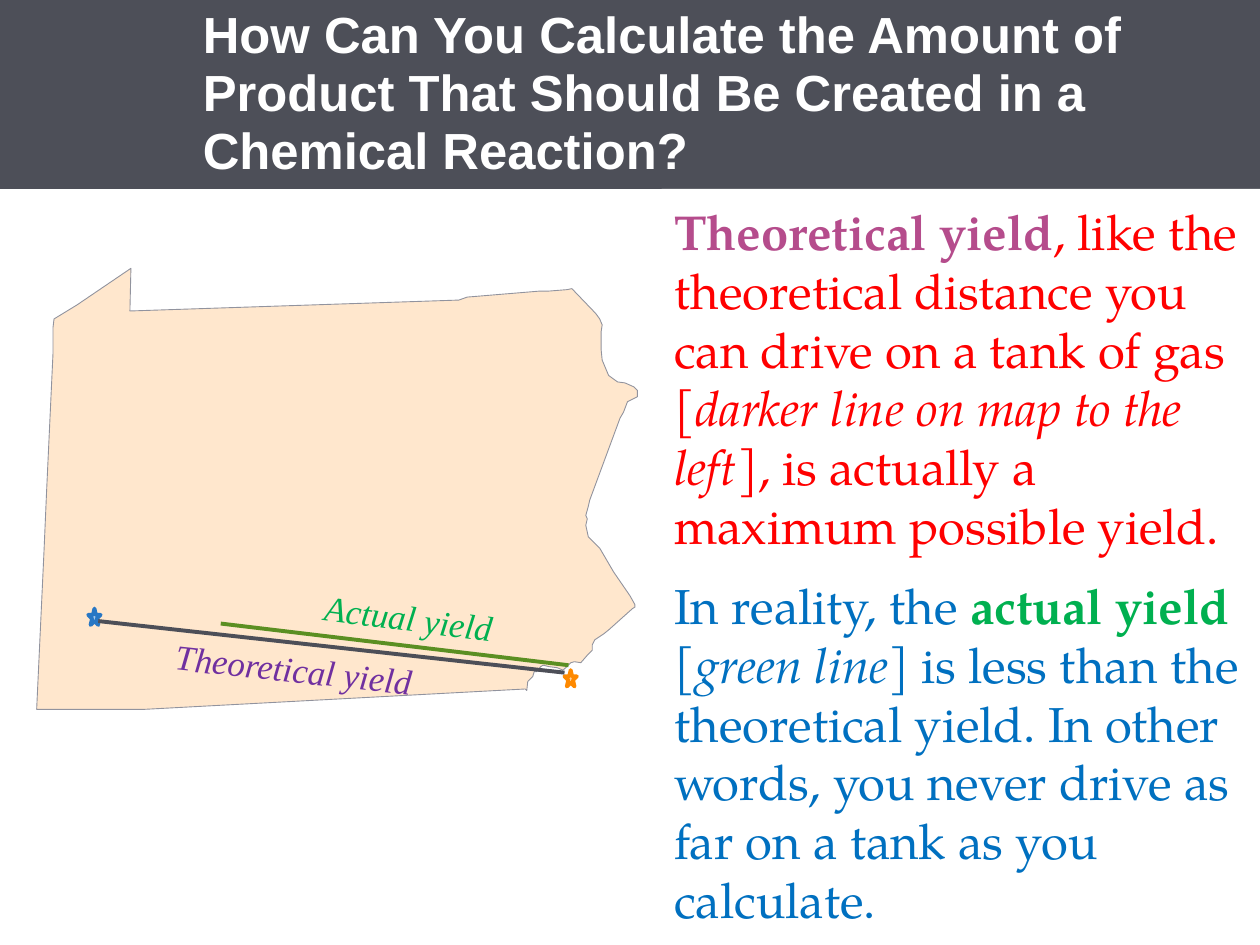
from dataclasses import dataclass

import lxml.etree
import pptx
import pptx.dml.color
import pptx.enum.shapes
import pptx.enum.text
import pptx.oxml.ns
import pptx.util

Cm = pptx.util.Cm
Pt = pptx.util.Pt
Shape = pptx.enum.shapes.MSO_SHAPE
Align = pptx.enum.text.PP_ALIGN
Anchor = pptx.enum.text.MSO_ANCHOR


@dataclass(frozen=True)
class Theme:
    slate: str = "4D4F58"
    white: str = "FFFFFF"
    land: str = "FFE7CD"
    border: str = "91939E"
    start_fill: str = "A4C9EC"
    start_line: str = "2877C4"
    end_fill: str = "FFD099"
    end_line: str = "FE8900"
    olive: str = "5B8F22"
    plum: str = "B54C8C"
    red: str = "FF0000"
    blue: str = "0070C0"
    green: str = "00B050"
    purple: str = "7030A0"
    title_font: str = "Arial"
    body_font: str = "TeX Gyre Pagella"
    label_font: str = "Times New Roman"
    title_size: float = 29
    body_size: float = 28
    label_size: float = 20
    thin: float = 0.5
    thick: float = 2.25


@dataclass(frozen=True)
class Box:
    """Position and size in centimetres."""
    left: float
    top: float
    width: float
    height: float

    def emu(self) -> tuple:
        return Cm(self.left), Cm(self.top), Cm(self.width), Cm(self.height)


@dataclass(frozen=True)
class Star:
    box: Box
    fill: str
    line: str


@dataclass(frozen=True)
class Route:
    start: tuple[float, float]
    end: tuple[float, float]
    color: str


@dataclass(frozen=True)
class Label:
    text: str
    box: Box
    angle: float
    color: str


T = Theme()

# State outline, clockwise from the north-east corner, in tenths of a millimetre
OUTLINE = [
    (1153, 582), (1201, 632), (1209, 643), (1214, 655), (1212, 668), (1212, 706),
    (1214, 726), (1227, 757), (1245, 770), (1260, 772), (1278, 780), (1285, 787),
    (1285, 800), (1265, 810), (1257, 831), (1250, 843), (1189, 1008), (1186, 1021),
    (1181, 1039), (1184, 1046), (1181, 1059), (1186, 1082), (1209, 1105), (1237, 1153),
    (1270, 1201), (1280, 1219), (1280, 1224), (1275, 1227), (1227, 1270), (1217, 1278),
    (1199, 1290), (1194, 1300), (1194, 1311), (1184, 1321), (1171, 1336), (1158, 1334),
    (1151, 1336), (1143, 1344), (1135, 1351), (1123, 1346), (1107, 1344), (1095, 1341),
    (1090, 1344), (1082, 1354), (1077, 1354), (1074, 1364), (1064, 1374), (1062, 1392),
    (1059, 1389), (292, 1430), (74, 1430), (89, 1107), (94, 991), (107, 711),
    (107, 660), (109, 643), (114, 640), (155, 615), (264, 541), (262, 627),
    (925, 605), (942, 599), (1087, 587), (1105, 587), (1143, 584),
]
START = Star(Box(1.78, 12.27, 0.25, 0.33), T.start_fill, T.start_line)
END = Star(Box(11.38, 13.51, 0.25, 0.33), T.end_fill, T.end_line)
ACTUAL = Route((11.46, 13.41), (4.45, 12.57), T.olive)
THEORETICAL = Route((11.38, 13.56), (1.98, 12.52), T.slate)
LABELS = [
    Label("Actual yield", Box(5.56, 11.89, 5.36, 1.12), 7.4, T.green),
    Label("Theoretical yield", Box(2.57, 12.93, 6.71, 1.12), 6.2, T.purple),
]


def rgb(color: str):
    return pptx.dml.color.RGBColor.from_string(color)


def paint(sp, fill: str, line: str | None = None, width: float = 0) -> None:
    sp.shadow.inherit = False
    sp.fill.solid()
    sp.fill.fore_color.rgb = rgb(fill)
    if line is None:
        sp.line.fill.background()
    else:
        sp.line.color.rgb = rgb(line)
        sp.line.width = Pt(width)


def add_run(p, text: str, *, font: str, size: float, color: str,
            bold: bool = False, italic: bool = False) -> None:
    r = p.add_run()
    r.text = text
    r.font.name = font
    r.font.size = Pt(size)
    r.font.color.rgb = rgb(color)
    r.font.bold = bold
    r.font.italic = italic


def set_frame(tf, anchor, left: float, top: float, right: float, bottom: float) -> None:
    """Wrap the text and set its insets in centimetres."""
    tf.word_wrap = True
    tf.vertical_anchor = anchor
    tf.margin_left, tf.margin_top = Cm(left), Cm(top)
    tf.margin_right, tf.margin_bottom = Cm(right), Cm(bottom)


def add_state(s) -> None:
    builder = s.shapes.build_freeform(*OUTLINE[0], scale=Cm(0.01))
    builder.add_line_segments(OUTLINE[1:], close=True)
    paint(builder.convert_to_shape(), T.land, T.border, T.thin)


def add_star(s, star: Star) -> None:
    sp = s.shapes.add_shape(Shape.STAR_5_POINT, *star.box.emu())
    paint(sp, star.fill, star.line, T.thick)


def add_route(s, route: Route) -> None:
    points = [Cm(v) for v in (*route.start, *route.end)]
    line = s.shapes.add_connector(pptx.enum.shapes.MSO_CONNECTOR.STRAIGHT, *points)
    line.line.color.rgb = rgb(route.color)
    line.line.width = Pt(T.thick)
    lxml.etree.SubElement(line._element.spPr, pptx.oxml.ns.qn("a:effectLst"))


def add_title(s) -> None:
    sp = s.shapes.add_shape(Shape.RECTANGLE, *Box(0, 0, 25.4, 3.81).emu())
    paint(sp, T.slate)
    set_frame(sp.text_frame, Anchor.MIDDLE, 4.09, 0.38, 0.91, 0.38)
    p = sp.text_frame.paragraphs[0]
    p.alignment = Align.LEFT
    p.line_spacing = 0.95
    add_run(p, "How Can You Calculate the Amount of Product That Should Be "
            "Created in a Chemical Reaction?",
            font=T.title_font, size=T.title_size, color=T.white, bold=True)


def add_body(s) -> None:
    sp = s.shapes.add_shape(Shape.RECTANGLE, *Box(13.34, 3.81, 12.06, 15.24).emu())
    paint(sp, T.white)
    tf = sp.text_frame
    set_frame(tf, Anchor.TOP, 0.25, 0.25, 0.25, 0.51)
    paragraphs = [
        (6, [("Theoretical yield", dict(color=T.plum, bold=True)),
             (", like the theoretical distance you can drive on a tank of gas [",
              dict(color=T.red)),
             ("darker line on map to the left", dict(color=T.red, italic=True)),
             ("], is actually a maximum possible yield.", dict(color=T.red))]),
        (12, [("In reality, the ", dict(color=T.blue)),
              ("actual yield ", dict(color=T.green, bold=True)),
              ("[", dict(color=T.blue)),
              ("green line", dict(color=T.blue, italic=True)),
              ("] is less than the theoretical yield. In other words, you never "
               "drive as far on a tank as you calculate.", dict(color=T.blue))]),
    ]
    for i, (space, runs) in enumerate(paragraphs):
        p = tf.add_paragraph() if i else tf.paragraphs[0]
        p.alignment = Align.LEFT
        p.space_before = Pt(space)
        for text, style in runs:
            add_run(p, text, font=T.body_font, size=T.body_size, **style)


def add_label(s, label: Label) -> None:
    sp = s.shapes.add_textbox(*label.box.emu())
    sp.rotation = label.angle
    set_frame(sp.text_frame, Anchor.TOP, 0.25, 0.13, 0.25, 0.13)
    p = sp.text_frame.paragraphs[0]
    p.alignment = Align.CENTER
    add_run(p, label.text, font=T.label_font, size=T.label_size,
            color=label.color, italic=True)


def main() -> None:
    prs = pptx.Presentation()
    prs.slide_width, prs.slide_height = Cm(25.4), Cm(19.05)
    s = prs.slides.add_slide(prs.slide_layouts[6])
    add_state(s)
    add_star(s, START)
    add_route(s, ACTUAL)
    add_star(s, END)
    add_route(s, THEORETICAL)
    add_title(s)
    add_body(s)
    for label in LABELS:
        add_label(s, label)
    prs.save("out.pptx")


if __name__ == "__main__":
    main()
